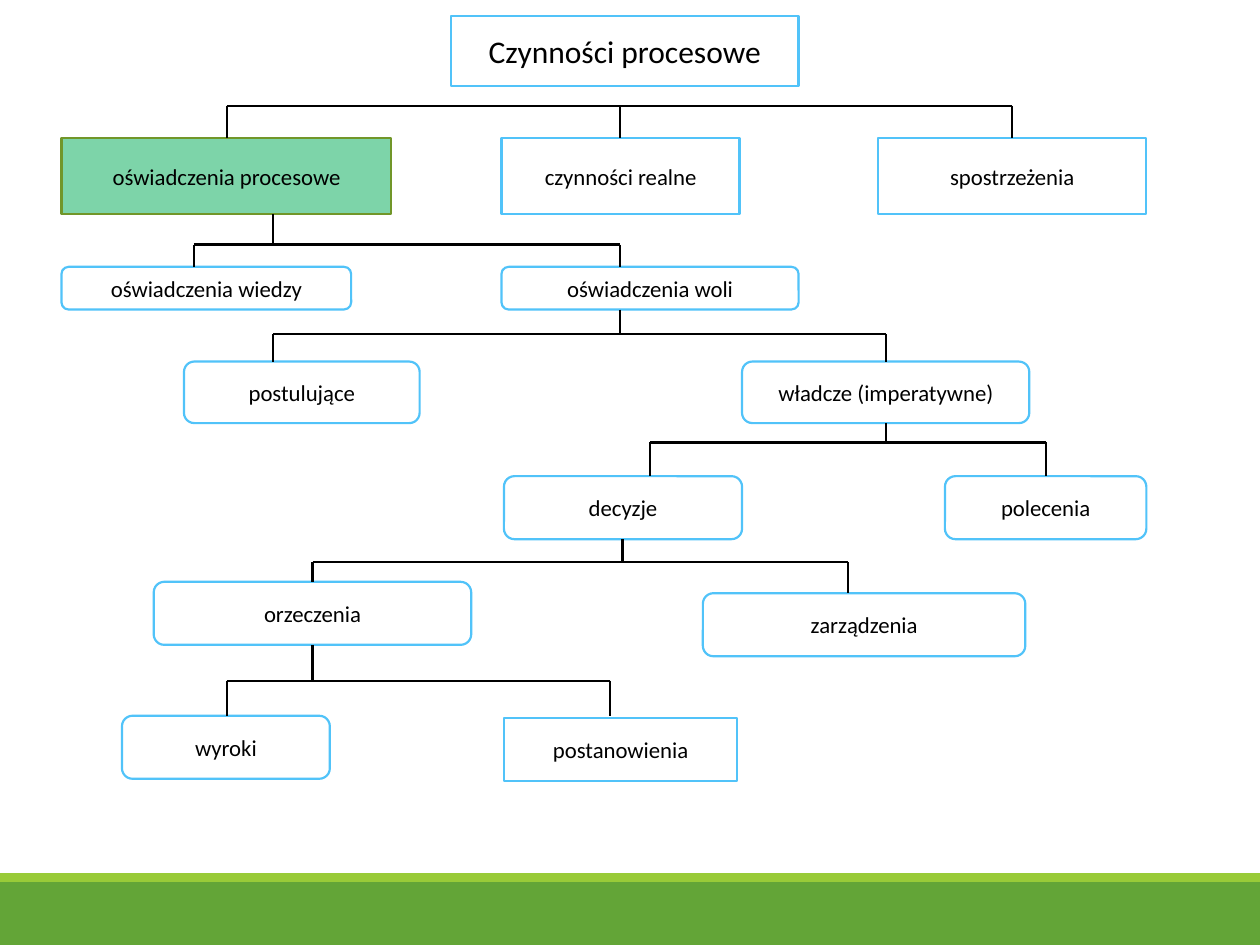
from typing import NamedTuple, Optional

from lxml import etree
from pptx import Presentation
from pptx.dml.color import RGBColor
from pptx.enum.shapes import MSO_CONNECTOR, MSO_SHAPE
from pptx.enum.text import MSO_ANCHOR, PP_ALIGN
from pptx.oxml.ns import qn
from pptx.util import Cm, Pt

RECT = MSO_SHAPE.RECTANGLE
ROUNDED = MSO_SHAPE.ROUNDED_RECTANGLE
STRAIGHT = MSO_CONNECTOR.STRAIGHT
CENTER = PP_ALIGN.CENTER
MIDDLE = MSO_ANCHOR.MIDDLE

COLORS = {
    "white": "FFFFFF",
    "black": "000000",
    "blue": "51C3F9",
    "mint": "7DD4A9",
    "olive": "719629",
    "green": "63A537",
    "lime": "99CB38",
}
FONT = "Calibri"
LINE_WIDTH = Pt(1.25)
SLIDE_WIDTH, SLIDE_HEIGHT = 25.4, 19.05


class Node(NamedTuple):
    label: str
    left: float
    top: float
    width: float
    height: float
    outline: int = ROUNDED
    fill: str = "white"
    border: str = "blue"
    size: int = 13


class Drop(NamedTuple):
    x: float
    bottom: float


class Branch(NamedTuple):
    """A horizontal bar with drops to the children and a stem from the parent."""
    y: float
    drops: tuple[Drop, ...]
    stem: Optional[Drop] = None


NODES = [
    Node("Czynności procesowe", 9.09, 0.33, 7.01, 1.4, RECT, size=18),
    Node("oświadczenia procesowe", 1.24, 2.79, 6.65, 1.52, RECT, "mint", "olive"),
    Node("czynności realne", 10.11, 2.79, 4.8, 1.52, RECT),
    Node("spostrzeżenia", 17.7, 2.79, 5.41, 1.52, RECT),
    Node("oświadczenia wiedzy", 1.24, 5.38, 5.84, 0.86),
    Node("oświadczenia woli", 10.11, 5.38, 5.99, 0.86),
    Node("postulujące", 3.71, 7.29, 4.75, 1.24),
    Node("władcze (imperatywne)", 14.96, 7.29, 5.79, 1.24),
    Node("decyzje", 10.16, 9.6, 4.8, 1.27),
    Node("polecenia", 19.05, 9.6, 4.06, 1.27),
    Node("orzeczenia", 3.1, 11.73, 6.4, 1.27),
    Node("zarządzenia", 14.17, 11.96, 6.5, 1.27),
    Node("wyroki", 2.46, 14.43, 4.19, 1.27),
    Node("postanowienia", 10.16, 14.48, 4.7, 1.27, RECT),
]

BRANCHES = [
    Branch(2.13, (Drop(4.57, 2.79), Drop(12.5, 2.79), Drop(20.4, 2.79))),
    Branch(4.93, (Drop(3.91, 5.38), Drop(12.5, 5.38)), Drop(5.51, 4.31)),
    Branch(6.73, (Drop(5.51, 7.29), Drop(17.86, 7.29)), Drop(12.5, 6.24)),
    Branch(8.92, (Drop(13.11, 9.6), Drop(21.08, 9.6)), Drop(17.86, 8.53)),
    Branch(11.33, (Drop(6.3, 11.73), Drop(17.09, 11.96)), Drop(12.55, 10.87)),
    Branch(13.72, (Drop(4.57, 14.43), Drop(12.29, 14.43)), Drop(6.3, 13)),
]


def rgb(name: str) -> RGBColor:
    return RGBColor.from_string(COLORS[name])


def add_block(slide, outline: int, left: float, top: float,
              width: float, height: float, fill: str):
    block = slide.shapes.add_shape(outline, Cm(left), Cm(top), Cm(width), Cm(height))
    block.shadow.inherit = False
    block.fill.solid()
    block.fill.fore_color.rgb = rgb(fill)
    return block


def add_band(slide, top: float, height: float, fill: str) -> None:
    band = add_block(slide, RECT, 0, top, SLIDE_WIDTH, height, fill)
    band.line.fill.background()


def add_node(slide, node: Node) -> None:
    box = add_block(slide, node.outline, node.left, node.top,
                    node.width, node.height, node.fill)
    box.line.color.rgb = rgb(node.border)
    box.line.width = LINE_WIDTH
    frame = box.text_frame
    frame.word_wrap = True
    frame.vertical_anchor = MIDDLE
    paragraph = frame.paragraphs[0]
    paragraph.alignment = CENTER
    run = paragraph.add_run()
    run.text = node.label
    run.font.name = FONT
    run.font.size = Pt(node.size)
    run.font.color.rgb = rgb("black")


def add_line(slide, x1: float, y1: float, x2: float, y2: float) -> None:
    line = slide.shapes.add_connector(STRAIGHT, Cm(x1), Cm(y1), Cm(x2), Cm(y2))
    line.line.color.rgb = rgb("black")
    line.line.width = LINE_WIDTH
    etree.SubElement(line._element.spPr, qn("a:effectLst"))


def add_branch(slide, branch: Branch) -> None:
    add_line(slide, branch.drops[0].x, branch.y, branch.drops[-1].x, branch.y)
    for drop in branch.drops:
        add_line(slide, drop.x, branch.y, drop.x, drop.bottom)
    if branch.stem:
        add_line(slide, branch.stem.x, branch.stem.bottom, branch.stem.x, branch.y)


def main() -> None:
    deck = Presentation()
    deck.slide_width, deck.slide_height = Cm(SLIDE_WIDTH), Cm(SLIDE_HEIGHT)
    slide = deck.slides.add_slide(deck.slide_layouts[6])
    add_band(slide, 17.78, 1.27, "green")
    add_band(slide, 17.6, 0.18, "lime")
    for node in NODES:
        add_node(slide, node)
    for branch in BRANCHES:
        add_branch(slide, branch)
    deck.save("out.pptx")


if __name__ == "__main__":
    main()
